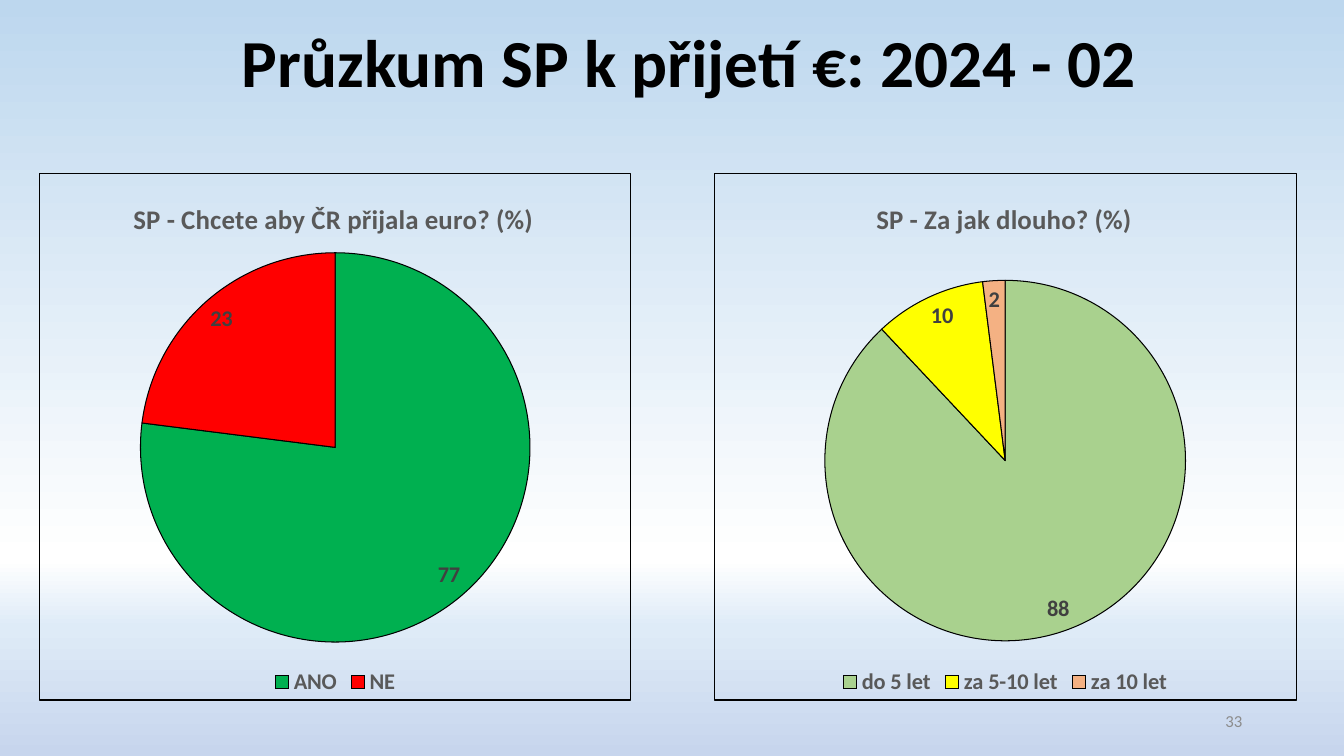
from lxml import etree
from pptx import Presentation
from pptx.chart.data import CategoryChartData
from pptx.dml.color import RGBColor
from pptx.enum.chart import XL_CHART_TYPE, XL_LABEL_POSITION, XL_LEGEND_POSITION
from pptx.enum.text import MSO_ANCHOR, MSO_AUTO_SIZE, PP_ALIGN
from pptx.oxml import parse_xml
from pptx.oxml.ns import nsdecls, qn
from pptx.util import Inches, Pt

PIE = XL_CHART_TYPE.PIE
LEGEND_BOTTOM = XL_LEGEND_POSITION.BOTTOM
INSIDE_END = XL_LABEL_POSITION.INSIDE_END
MIDDLE = MSO_ANCHOR.MIDDLE
FIT_SHAPE = MSO_AUTO_SIZE.SHAPE_TO_FIT_TEXT
LEFT, RIGHT = PP_ALIGN.LEFT, PP_ALIGN.RIGHT

FONT = "Calibri"
BLACK = RGBColor(0x00, 0x00, 0x00)
CHART_GRAY = RGBColor(0x59, 0x59, 0x59)
LABEL_GRAY = RGBColor(0x40, 0x40, 0x40)
NUMBER_GRAY = RGBColor(0x8C, 0x8C, 0x8C)
GREEN = RGBColor(0x00, 0xB0, 0x50)
RED = RGBColor(0xFF, 0x00, 0x00)
LIGHT_GREEN = RGBColor(0xA9, 0xD1, 0x8E)
YELLOW = RGBColor(0xFF, 0xFF, 0x00)
ORANGE = RGBColor(0xF4, 0xB1, 0x83)

BACKGROUND_STOPS = [(0, "BDD7EE"), (74, "FFFFFF"), (83, "DEEBF7"), (100, "C7D5ED")]
HEADING = "Průzkum SP k přijetí €: 2024 - 02"
PAGE_NUMBER = "33"
CHART_TOP, CHART_HEIGHT = 1.72, 5.23
# title_at and plot_at are fractions of the chart's width and height
CHARTS = [
    {
        "title": "SP - Chcete aby ČR přijala euro? (%)",
        "left": 0.39, "width": 5.87,
        "title_at": (0.15, 0.04), "plot_at": (0.17, 0.15, 0.66, 0.74),
        "slices": [("ANO", 77, GREEN), ("NE", 23, RED)],
    },
    {
        "title": "SP - Za jak dlouho? (%)",
        "left": 7.08, "width": 5.78,
        "title_at": (0.27, 0.04), "plot_at": (0.19, 0.2, 0.62, 0.69),
        "slices": [("do 5 let", 88, LIGHT_GREEN), ("za 5-10 let", 10, YELLOW),
                   ("za 10 let", 2, ORANGE)],
    },
]


def style_font(font, size, color, bold=True):
    font.name = FONT
    font.size = Pt(size)
    font.bold = bold
    font.color.rgb = color


def paint_background(page):
    fill = page.background.fill
    fill.gradient()
    fill.gradient_angle = 270
    stops = next(page.background._cSld.iter(qn("a:gsLst")))
    for stop in list(stops):
        stops.remove(stop)
    for percent, color in BACKGROUND_STOPS:
        stop = etree.SubElement(stops, qn("a:gs"), pos=str(percent * 1000))
        etree.SubElement(stop, qn("a:srgbClr"), val=color)


def add_text(page, text, place, size, color, bold, align):
    box = page.shapes.add_textbox(*map(Inches, place))
    frame = box.text_frame
    frame.text = text
    para = frame.paragraphs[0]
    para.alignment = align
    style_font(para.runs[0].font, size, color, bold)
    return frame


def set_layout(parent, index, fractions, inner=False):
    """Place a chart part by fractions: x, y and, if given, width and height."""
    for old in parent.findall(qn("c:layout")):
        parent.remove(old)
    layout = etree.Element(qn("c:layout"))
    manual = etree.SubElement(layout, qn("c:manualLayout"))
    if inner:
        etree.SubElement(manual, qn("c:layoutTarget"), val="inner")
    for mode in ("xMode", "yMode"):
        etree.SubElement(manual, qn("c:" + mode), val="edge")
    for name, value in zip("xywh", fractions):
        etree.SubElement(manual, qn("c:" + name), val=str(value))
    parent.insert(index, layout)


def add_pie(page, content):
    names, values, colors = zip(*content["slices"])
    data = CategoryChartData()
    data.categories = names
    data.add_series("Series 1", values)
    place = (content["left"], CHART_TOP, content["width"], CHART_HEIGHT)
    chart = page.shapes.add_chart(PIE, *map(Inches, place), data).chart
    style_font(chart.font, 16, BLACK)

    chart.has_title = True
    title_frame = chart.chart_title.text_frame
    title_frame.text = content["title"]
    style_font(title_frame.paragraphs[0].runs[0].font, 19.2, CHART_GRAY)
    set_layout(chart.chart_title._element, 1, content["title_at"])

    chart.has_legend = True
    chart.legend.position = LEGEND_BOTTOM
    chart.legend.include_in_layout = False
    style_font(chart.legend.font, 16, CHART_GRAY)

    plot = chart.plots[0]
    plot.vary_by_categories = True
    plot.has_data_labels = True
    labels = plot.data_labels
    labels.show_value = True
    labels.show_percentage = False
    labels.position = INSIDE_END
    style_font(labels.font, 16, LABEL_GRAY)
    for index, color in enumerate(colors):
        piece = plot.series[0].points[index].format
        piece.fill.solid()
        piece.fill.fore_color.rgb = color
        piece.line.color.rgb = BLACK
        piece.line.width = Pt(0.75)

    chart_part = chart._chartSpace.find(qn("c:chart"))
    set_layout(chart_part.find(qn("c:plotArea")), 0, content["plot_at"], inner=True)
    chart_part.addnext(parse_xml(
        f'<c:spPr {nsdecls("c", "a")}><a:noFill/><a:ln w="{Pt(0.75)}"><a:solidFill>'
        f'<a:srgbClr val="{BLACK}"/></a:solidFill></a:ln></c:spPr>'))


def main():
    deck = Presentation()
    deck.slide_width, deck.slide_height = Inches(13.33), Inches(7.5)
    page = deck.slides.add_slide(deck.slide_layouts[6])
    paint_background(page)
    number = add_text(page, PAGE_NUMBER, (9.42, 6.95, 3, 0.4), 12, NUMBER_GRAY, False, RIGHT)
    number.word_wrap = True
    number.vertical_anchor = MIDDLE
    heading = add_text(page, HEADING, (2.3, 0.15, 9.17, 0.91), 48, BLACK, True, LEFT)
    heading.word_wrap = False
    heading.auto_size = FIT_SHAPE
    for content in CHARTS:
        add_pie(page, content)
    deck.save("out.pptx")


if __name__ == "__main__":
    main()
